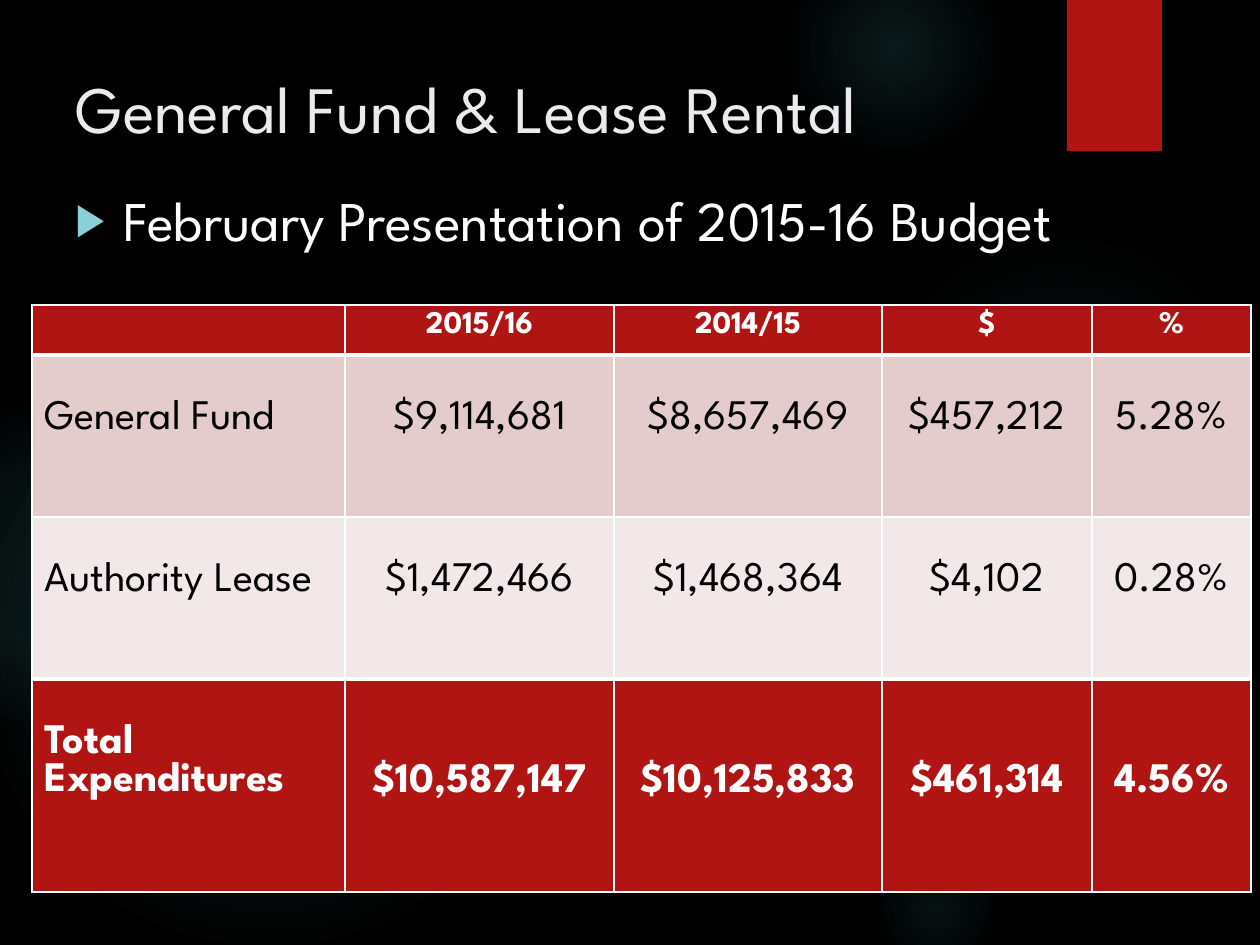
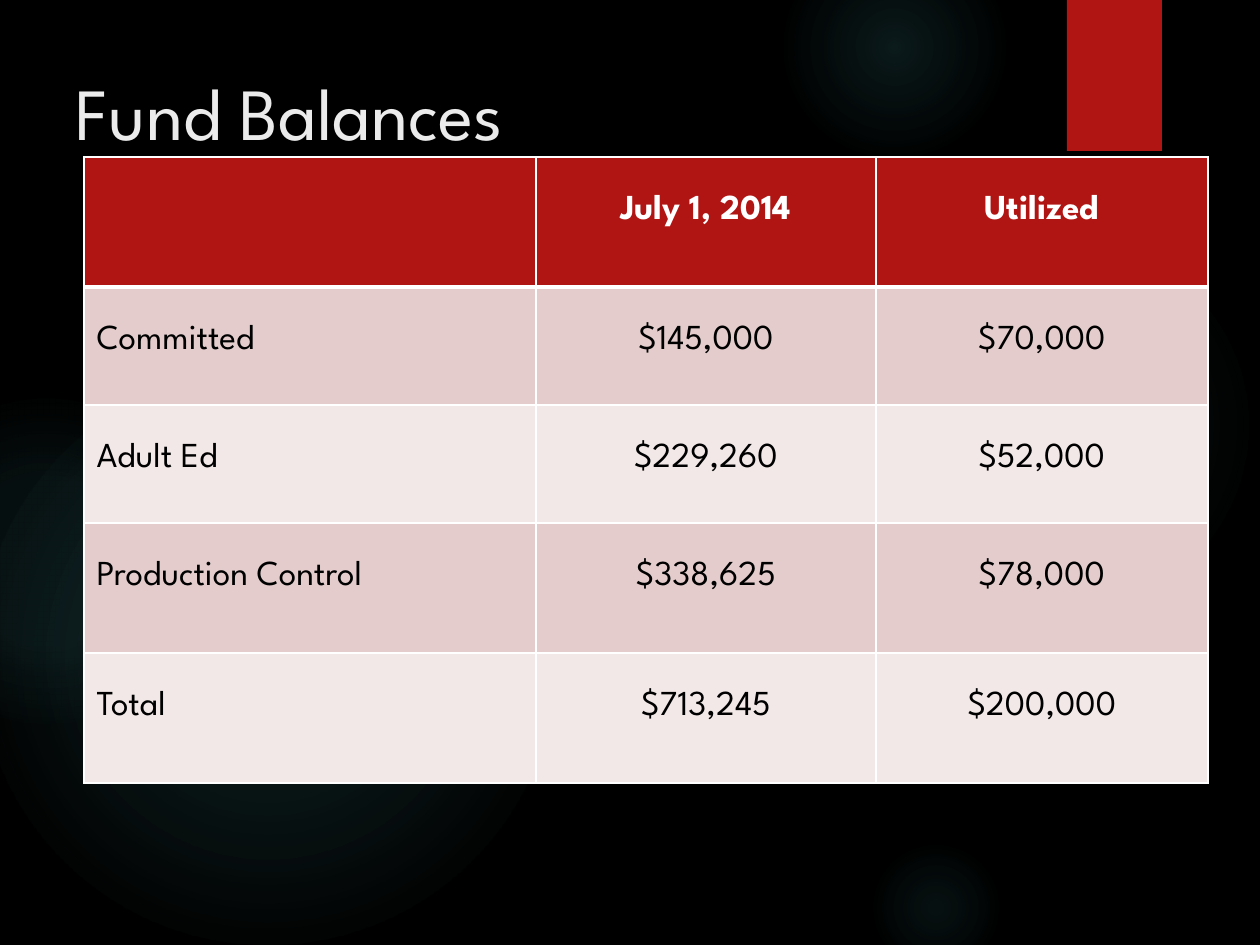
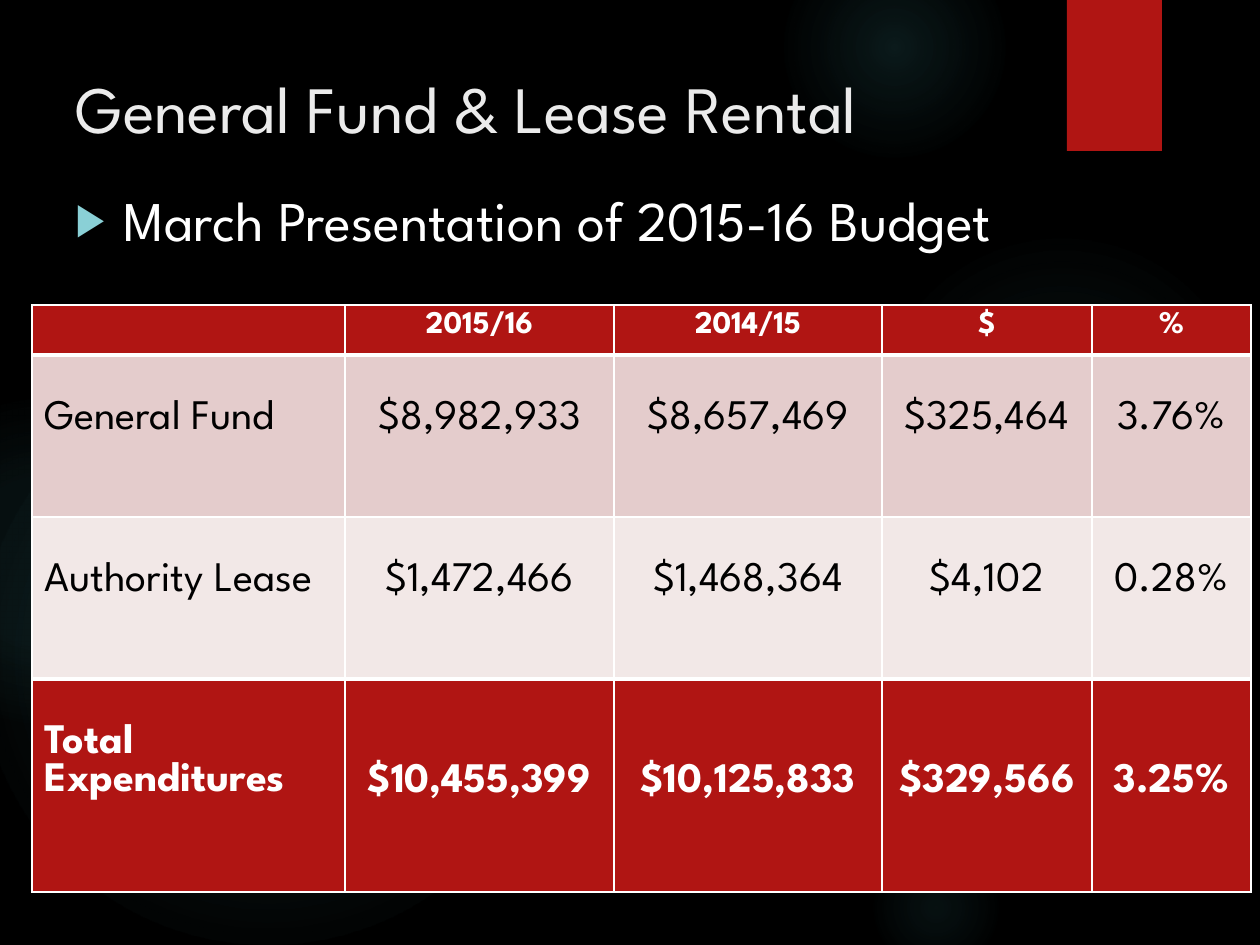
import pptx
import pptx.dml.color
import pptx.enum.shapes
import pptx.enum.text
import pptx.oxml
import pptx.oxml.ns
import pptx.util

RGB = pptx.dml.color.RGBColor
ALIGN = pptx.enum.text.PP_ALIGN
SHAPE = pptx.enum.shapes.MSO_SHAPE
qn = pptx.oxml.ns.qn

EMU_PER_PX = 914400 / 126
FONT = "League Spartan"
BLACK = RGB(0x00, 0x00, 0x00)
WHITE = RGB(0xFF, 0xFF, 0xFF)
TITLE_GREY = RGB(0xEB, 0xEB, 0xEB)
RED = RGB(0xB0, 0x15, 0x13)
ROSE = RGB(0xE4, 0xCC, 0xCC)
PALE_ROSE = RGB(0xF2, 0xE8, 0xE7)
TEAL = RGB(0x50, 0xB9, 0xC1)
BULLET_TEAL = RGB(0x8A, 0xD0, 0xD6)

GLOWS = [
    ((868, 231, 388), ((0, 7), (36, 6), (69, 0))),
    ((784, -63, 221), ((0, 14), (36, 7), (73, 0))),
    ((868, 840, 136), ((0, 9), (36, 5), (66, 0))),
    ((-21, 368, 577), ((0, 11), (36, 10), (75, 0))),
    ((-116, 399, 325), ((0, 8), (36, 8), (72, 0))),
]
BAND = (1067, 0, 95, 151)
TITLE_TOP_MARGIN = 29
INSET = 6

BUDGET_TITLE_BOX = (63, 38, 1134, 98)
BUDGET_BODY_BOX = (63, 179, 1207, 655)
BUDGET_TABLE_ORIGIN = (32, 305)
BUDGET_COLUMNS = (313, 269, 268, 210, 159)
BUDGET_ROWS = (50, 162, 162, 213)
BUDGET_LINE = 39
BUDGET_HEADINGS = ["", "2015/16", "2014/15", "$", "%"]
AUTHORITY_LEASE = ["Authority Lease", "$1,472,466", "$1,468,364", "$4,102", "0.28%"]

BALANCES_TITLE_BOX = (63, 38, 1050, 141)
BALANCES_TABLE_ORIGIN = (84, 157)
BALANCES_COLUMNS = (452, 340, 332)
BALANCES_ROWS = (130, 118, 118, 130, 130)
BALANCES_LINE = 32
BALANCES = [
    ["", "July 1, 2014", "Utilized"],
    ["Committed", "$145,000", "$70,000"],
    ["Adult Ed", "$229,260", "$52,000"],
    ["Production Control", "$338,625", "$78,000"],
    ["Total", "$713,245", "$200,000"],
]


def px(length):
    return pptx.util.Emu(round(length * EMU_PER_PX))


def px_box(box):
    return [px(length) for length in box]


def drawing(markup):
    namespace = pptx.oxml.ns.nsdecls("a")
    return pptx.oxml.parse_xml(f"<a:root {namespace}>{markup}</a:root>")[0]


def format_runs(paragraph, size, color, bold=False):
    for run in paragraph.runs:
        run.font.name = FONT
        run.font.size = pptx.util.Pt(size)
        run.font.bold = bold
        run.font.color.rgb = color


def add_plain_shape(slide, kind, box):
    shape = slide.shapes.add_shape(kind, *px_box(box))
    shape.line.fill.background()
    shape.shadow.inherit = False
    return shape


def add_glow(slide, box, stops):
    left, top, diameter = box
    glow = add_plain_shape(slide, SHAPE.OVAL, (left, top, diameter, diameter))
    glow.fill.background()
    stop_markup = "".join(
        f'<a:gs pos="{position * 1000}"><a:srgbClr val="{TEAL}">'
        f'<a:alpha val="{alpha * 1000}"/></a:srgbClr></a:gs>'
        for position, alpha in stops
    )
    gradient = drawing(
        f'<a:gradFill><a:gsLst>{stop_markup}</a:gsLst><a:path path="circle">'
        '<a:fillToRect l="50000" t="50000" r="50000" b="50000"/></a:path></a:gradFill>'
    )
    properties = glow._element.spPr
    properties.replace(properties.find(qn("a:noFill")), gradient)
    return glow


def add_band(slide):
    band = add_plain_shape(slide, SHAPE.RECTANGLE, BAND)
    band.fill.solid()
    band.fill.fore_color.rgb = RED
    shadow = drawing(
        f'<a:outerShdw blurRad="{pptx.util.Pt(3)}" dist="{pptx.util.Pt(2)}" dir="5400000">'
        f'<a:srgbClr val="{BLACK}"><a:alpha val="45000"/></a:srgbClr></a:outerShdw>'
    )
    band._element.spPr.find(qn("a:effectLst")).append(shadow)
    return band


def decorate_master(master, slide):
    master.background.fill.solid()
    master.background.fill.fore_color.rgb = BLACK
    decor = [add_glow(slide, box, stops) for box, stops in GLOWS] + [add_band(slide)]
    for number, part in enumerate(decor, 100):
        part._element.nvSpPr.cNvPr.set("id", str(number))
        master.shapes._spTree.append(part._element)


def place_title(slide, box, text, size):
    title = slide.shapes.title
    title.left, title.top, title.width, title.height = px_box(box)
    frame = title.text_frame
    frame.text = text
    frame.word_wrap = True
    frame.auto_size = pptx.enum.text.MSO_AUTO_SIZE.NONE
    frame.vertical_anchor = pptx.enum.text.MSO_ANCHOR.TOP
    frame.margin_top = px(TITLE_TOP_MARGIN)
    frame.paragraphs[0].alignment = ALIGN.LEFT
    format_runs(frame.paragraphs[0], size, TITLE_GREY)


def add_bullet_line(slide, box, text):
    frame = slide.shapes.add_textbox(*px_box(box)).text_frame
    frame.word_wrap = True
    frame.text = text
    line = frame.paragraphs[0]
    line.space_before = pptx.util.Pt(10)
    format_runs(line, 32, WHITE)
    properties = line._p.get_or_add_pPr()
    properties.set("marL", str(px(48)))
    properties.set("indent", str(px(-48)))
    for markup in (
        f'<a:buClr><a:srgbClr val="{BULLET_TEAL}"/></a:buClr>',
        '<a:buSzPct val="80000"/>',
        '<a:buFont typeface="Arial"/>',
        '<a:buChar char="▶"/>',
    ):
        properties.append(drawing(markup))


def set_borders(cell, top, bottom):
    properties = cell._tc.get_or_add_tcPr()
    for side, width in (("L", 1), ("R", 1), ("T", top), ("B", bottom)):
        properties.append(drawing(
            f'<a:ln{side} w="{pptx.util.Pt(width)}"><a:solidFill>'
            f'<a:srgbClr val="{WHITE}"/></a:solidFill></a:ln{side}>'
        ))


def fill_cell(cell, text, fill, color, size, bold, centred, top_margin):
    cell.fill.solid()
    cell.fill.fore_color.rgb = fill
    cell.margin_top = px(top_margin)
    cell.margin_bottom = 0
    cell.text_frame.text = text
    paragraph = cell.text_frame.paragraphs[0]
    paragraph.alignment = ALIGN.CENTER if centred else ALIGN.LEFT
    format_runs(paragraph, size, color, bold)


def add_money_table(slide, origin, columns, heights, rows, sizes, strong_rows, top_margin):
    box = (*origin, sum(columns), sum(heights))
    table = slide.shapes.add_table(len(rows), len(columns), *px_box(box)).table
    table.horz_banding = False
    for column, width in zip(table.columns, columns):
        column.width = px(width)
    thick_edges = {1, *strong_rows} - {0}
    for r, (values, height) in enumerate(zip(rows, heights)):
        table.rows[r].height = px(height)
        strong = r in strong_rows
        fill = RED if strong else (PALE_ROSE, ROSE)[r % 2]
        for c, value in enumerate(values):
            cell = table.cell(r, c)
            set_borders(cell, 3 if r in thick_edges else 1, 3 if r + 1 in thick_edges else 1)
            fill_cell(cell, value, fill, WHITE if strong else BLACK,
                      sizes[min(r, 1)], strong, c > 0, top_margin(r, c))


def budget_top_margin(row, column):
    lines_above = 0 if row == 0 else 2 if row == 3 and column > 0 else 1
    return INSET + lines_above * BUDGET_LINE


def balances_top_margin(row, column):
    return INSET + BALANCES_LINE


def build_budget(slide, month, general_fund, total):
    place_title(slide, BUDGET_TITLE_BOX, "General Fund & Lease Rental", 37.8)
    add_bullet_line(slide, BUDGET_BODY_BOX, f"{month} Presentation of 2015-16 Budget")
    rows = [
        BUDGET_HEADINGS,
        ["General Fund", *general_fund],
        AUTHORITY_LEASE,
        ["Total Expenditures", *total],
    ]
    add_money_table(slide, BUDGET_TABLE_ORIGIN, BUDGET_COLUMNS, BUDGET_ROWS, rows,
                    (18, 24), (0, 3), budget_top_margin)


def build_balances(slide):
    place_title(slide, BALANCES_TITLE_BOX, "Fund Balances", 42)
    add_money_table(slide, BALANCES_TABLE_ORIGIN, BALANCES_COLUMNS, BALANCES_ROWS, BALANCES,
                    (20, 20), (0,), balances_top_margin)


def main():
    deck = pptx.Presentation()
    deck.slide_width, deck.slide_height = px(1260), px(945)
    title_only = deck.slide_layouts[5]
    february, balances, march = [deck.slides.add_slide(title_only) for _ in range(3)]
    decorate_master(deck.slide_master, february)
    build_budget(february, "February",
                 ["$9,114,681", "$8,657,469", "$457,212", "5.28%"],
                 ["$10,587,147", "$10,125,833", "$461,314", "4.56%"])
    build_balances(balances)
    build_budget(march, "March",
                 ["$8,982,933", "$8,657,469", "$325,464", "3.76%"],
                 ["$10,455,399", "$10,125,833", "$329,566", "3.25%"])
    deck.save("out.pptx")


if __name__ == "__main__":
    main()
